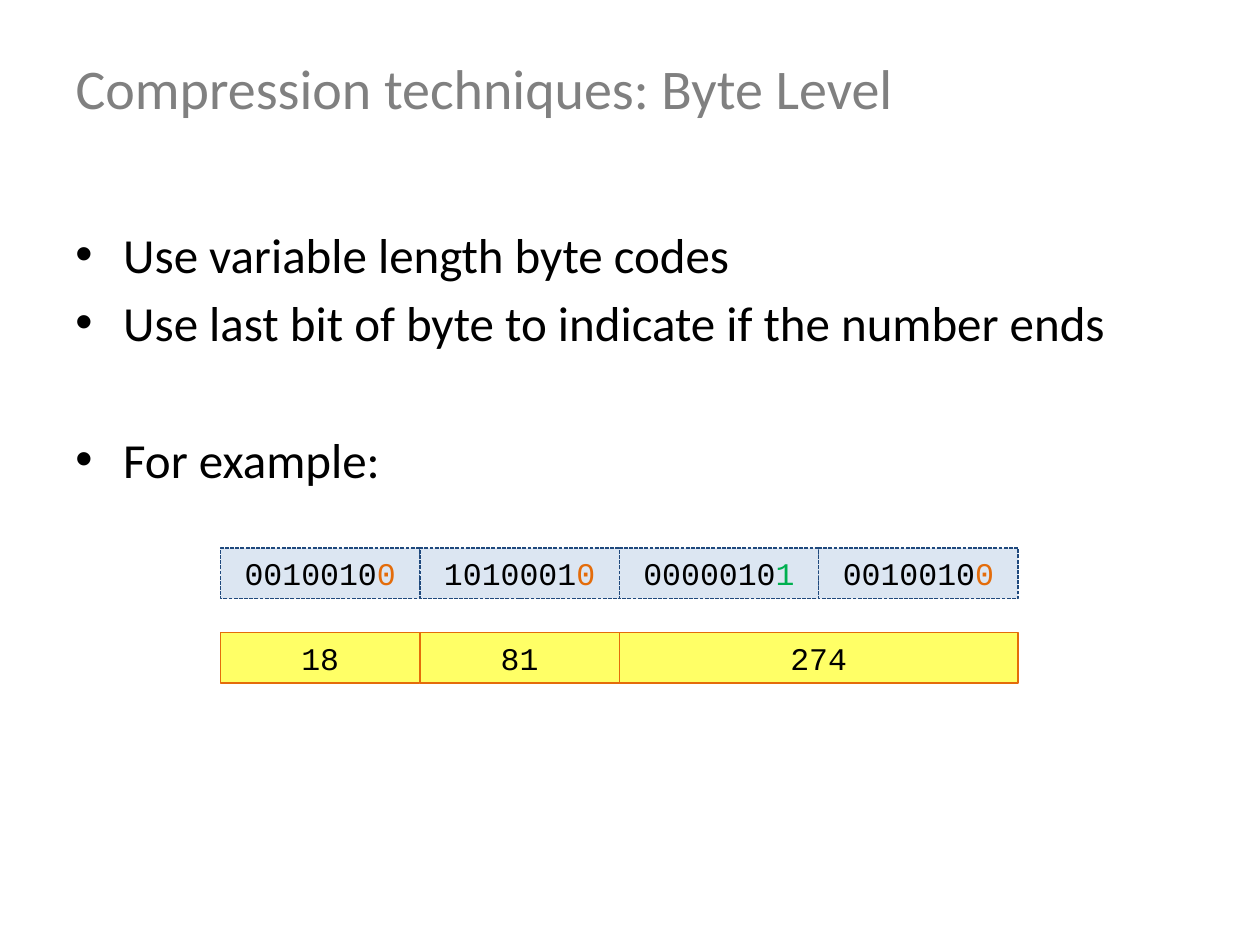
from collections import namedtuple
from dataclasses import dataclass
from pptx import Presentation
from pptx import util as u
from pptx.dml.color import RGBColor
from pptx.enum import dml, shapes, text
from pptx.oxml.ns import qn
from lxml import etree

Box = namedtuple("Box", "left top width height")
Cell = namedtuple("Cell", "span pieces")


@dataclass(frozen=True)
class Theme:
    """Colours, fonts and sizes of the slide."""
    title: str = "808080"
    ink: str = "000000"
    code_fill: str = "DCE6F2"
    code_line: str = "1F497D"
    value_fill: str = "FFFF66"
    more: str = "E46C0A"
    last: str = "00B050"
    sans: str = "Calibri"
    mono: str = "Courier New"
    title_size: float = 32
    body_size: float = 28
    cell_size: float = 18


THEME = Theme()
COLUMNS = 4


def inches(box):
    """Turn a box in inches into slide lengths."""
    return [u.Inches(length) for length in box]


def style(font, name, size, colour):
    """Set the face, size and colour of a font."""
    font.name, font.size = name, u.Pt(size)
    font.color.rgb = RGBColor.from_string(colour)


def add_title(page, box, words):
    """Place the title placeholder."""
    title = page.shapes.title
    title.left, title.top, title.width, title.height = inches(box)
    frame = title.text_frame
    frame.vertical_anchor = text.MSO_ANCHOR.MIDDLE
    frame.text = words
    para = frame.paragraphs[0]
    para.alignment = text.PP_ALIGN.LEFT
    style(para.font, THEME.sans, THEME.title_size, THEME.title)


def add_bullets(page, box, items):
    """Place bulleted lines, each given with its space before in points."""
    frame = page.shapes.add_textbox(*inches(box)).text_frame
    frame.word_wrap = True
    for index, (words, gap) in enumerate(items):
        para = frame.paragraphs[0] if index == 0 else frame.add_paragraph()
        para.text = words
        para.space_before = u.Pt(gap)
        props = para._p.get_or_add_pPr()
        props.set("marL", str(u.Inches(0.38)))
        props.set("indent", str(u.Inches(-0.38)))
        etree.SubElement(props, qn("a:buFont")).set("typeface", "Arial")
        etree.SubElement(props, qn("a:buChar")).set("char", "•")
        style(para.font, THEME.sans, THEME.body_size, THEME.ink)


def add_cells(page, box, cells, fill, line, dash=None):
    """Fill a row of the grid with bordered cells of coloured text."""
    step, start = box.width / COLUMNS, 0
    for cell in cells:
        place = Box(box.left + start * step, box.top, cell.span * step, box.height)
        shape = page.shapes.add_shape(shapes.MSO_SHAPE.RECTANGLE, *inches(place))
        shape.shadow.inherit = False
        shape.fill.solid()
        shape.fill.fore_color.rgb = RGBColor.from_string(fill)
        shape.line.color.rgb = RGBColor.from_string(line)
        shape.line.width = u.Pt(0.75)
        if dash:
            shape.line.dash_style = dash
        frame = shape.text_frame
        frame.auto_size = text.MSO_AUTO_SIZE.SHAPE_TO_FIT_TEXT
        para = frame.paragraphs[0]
        para.alignment = text.PP_ALIGN.CENTER
        style(para.font, THEME.mono, THEME.cell_size, THEME.ink)
        for words, colour in cell.pieces:
            span = para.add_run()
            span.text = words
            span.font.color.rgb = RGBColor.from_string(colour)
        start += cell.span


def add_example(page, box):
    """Show the byte codes above the numbers they stand for."""
    row = box.height * 0.375
    codes = ["00100100", "10100010", "00000101", "00100100"]
    flags = {"0": THEME.more, "1": THEME.last}
    code_cells = [Cell(1, [(code[:-1], THEME.ink), (code[-1], flags[code[-1]])])
                  for code in codes]
    values = [("18", 1), ("81", 1), ("274", 2)]
    value_cells = [Cell(span, [(value, THEME.ink)]) for value, span in values]
    add_cells(page, box._replace(height=row), code_cells,
              THEME.code_fill, THEME.code_line, dml.MSO_LINE.SQUARE_DOT)
    add_cells(page, box._replace(top=box.top + box.height - row, height=row),
              value_cells, THEME.value_fill, THEME.more)


def main():
    """Build and save the slide."""
    deck = Presentation()
    deck.slide_width, deck.slide_height = u.Inches(10), u.Inches(7.5)
    page = deck.slides.add_slide(deck.slide_layouts[5])
    add_title(page, Box(0.5, 0.3, 9, 0.78), "Compression techniques: Byte Level")
    add_bullets(page, Box(0.5, 1.73, 9, 4.77), [
        ("Use variable length byte codes", 0),
        ("Use last bit of byte to indicate if the number ends", 5.5),
        ("For example:", 44.5),
    ])
    add_example(page, Box(1.75, 4.35, 6.33, 1.07))
    deck.save("out.pptx")


if __name__ == "__main__":
    main()
